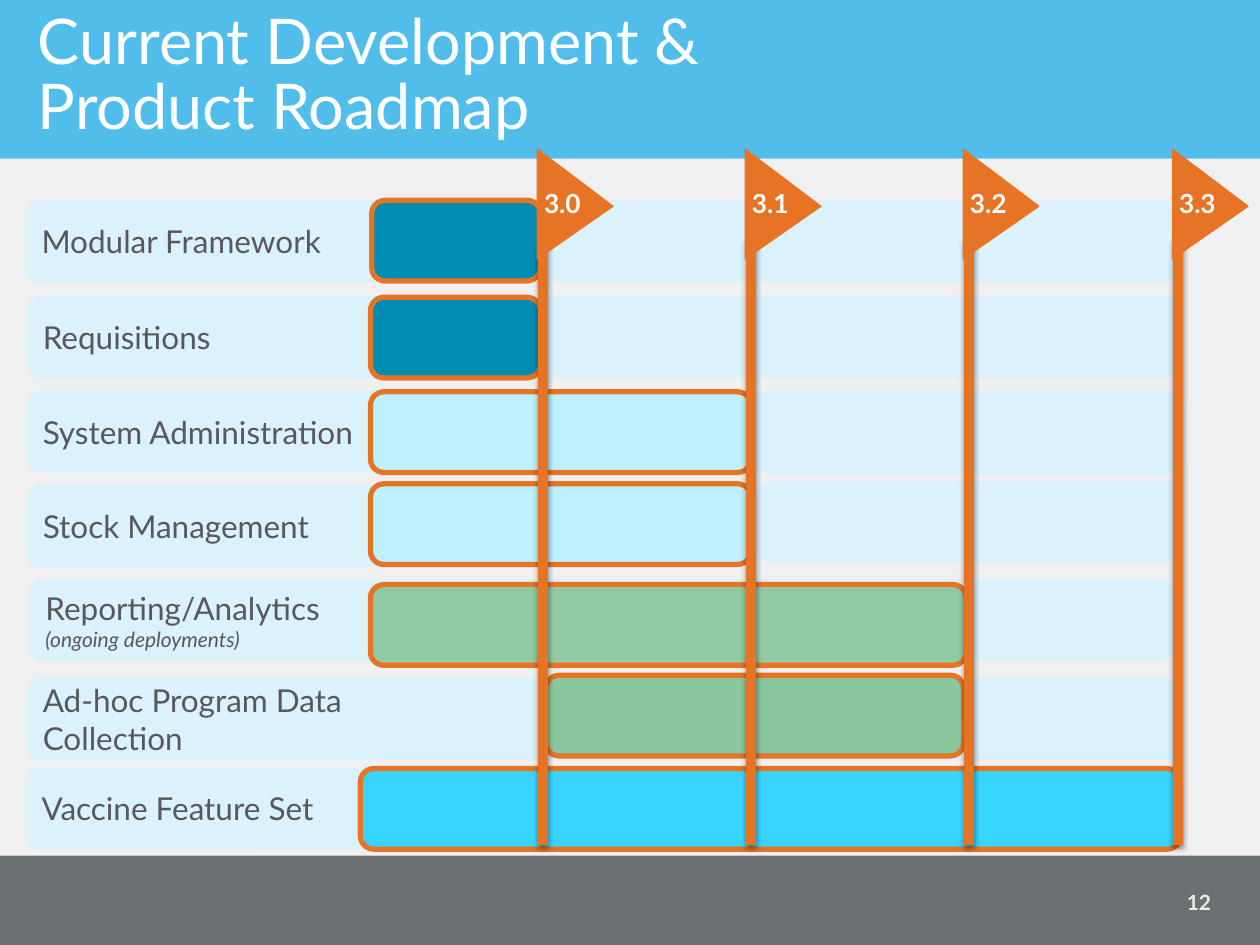
from lxml.etree import SubElement
from pptx import Presentation
from pptx.dml.color import RGBColor
from pptx.enum.shapes import MSO_CONNECTOR, MSO_SHAPE
from pptx.enum.text import MSO_ANCHOR, MSO_AUTO_SIZE, PP_ALIGN
from pptx.oxml.ns import qn
from pptx.util import Inches, Pt

COLORS = {
    "banner": "51BDEB", "footer": "6B7173", "panel": "F0F0F0", "lane": "DBF1FB",
    "orange": "E77325", "done": "008DB3", "planned": "BDF1FF", "vaccine": "38D5FF",
    "green": "008000", "text": "58585A", "white": "FFFFFF", "number": "EBEBEB",
    "shadow": "000000",
}


class RoadmapSlide:
    font_name = "Lato"

    def __init__(self, slide):
        self.slide = slide
        self.shapes = slide.shapes

    def color(self, name):
        return RGBColor.from_string(COLORS[name])

    def set_text(self, frame, lines, color, align=PP_ALIGN.LEFT, anchor=MSO_ANCHOR.MIDDLE):
        """Fill a text frame; each line is (text, dict of font values)."""
        frame.word_wrap = True
        frame.vertical_anchor = anchor
        for index, (text, style) in enumerate(lines):
            paragraph = frame.paragraphs[0] if index == 0 else frame.add_paragraph()
            paragraph.text = text
            paragraph.alignment = align
            for key, value in {"name": self.font_name, **style}.items():
                setattr(paragraph.font, key, value)
            paragraph.font.color.rgb = self.color(color)

    def box(self, kind, left, top, width, height, fill, line=None, line_width=3, alpha=None):
        shape = self.shapes.add_shape(
            kind, Inches(left), Inches(top), Inches(width), Inches(height))
        shape.shadow.inherit = False
        shape.fill.solid()
        shape.fill.fore_color.rgb = self.color(fill)
        if alpha:
            rgb = shape.element.spPr.find(".//" + qn("a:srgbClr"))
            SubElement(rgb, qn("a:alpha"), val=str(alpha * 1000))
        if line:
            shape.line.color.rgb = self.color(line)
            shape.line.width = Pt(line_width)
        else:
            shape.line.fill.background()
        return shape

    def title(self, text):
        title = self.shapes.title
        # The title belongs in front of the banner
        title.element.getparent().append(title.element)
        place = {"left": 0.2, "top": 0.03, "width": 9.52, "height": 1.17}
        for key, value in place.items():
            setattr(title, key, Inches(value))
        self.set_text(title.text_frame, [(text, {"size": Pt(36)})], "white")
        title.text_frame.auto_size = MSO_AUTO_SIZE.NONE
        title.text_frame.paragraphs[0].line_spacing = Pt(37.2)

    def text(self, left, top, width, height, text, size, color, **layout):
        label = self.shapes.add_textbox(
            Inches(left), Inches(top), Inches(width), Inches(height))
        self.set_text(label.text_frame, [(text, {"size": Pt(size), "bold": True})],
                      color, **layout)

    def lane(self, left, top, width, lines):
        lane = self.box(MSO_SHAPE.ROUNDED_RECTANGLE, left, top, width, 0.65, "lane")
        self.set_text(lane.text_frame, lines, "text")

    def bar(self, left, top, width, fill, alpha=None):
        self.box(MSO_SHAPE.ROUNDED_RECTANGLE, left, top, width, 0.64, fill,
                 line="orange", alpha=alpha)

    def pole(self, x, top, bottom):
        pole = self.shapes.add_connector(
            MSO_CONNECTOR.STRAIGHT, Inches(x), Inches(top), Inches(x), Inches(bottom))
        pole.line.color.rgb = self.color("orange")
        pole.line.width = Pt(6)
        effects = SubElement(pole.element.spPr, qn("a:effectLst"))
        shadow = SubElement(effects, qn("a:outerShdw"), blurRad=str(Pt(3.1)),
                            dist=str(Pt(1.6)), dir="5400000", rotWithShape="0")
        rgb = SubElement(shadow, qn("a:srgbClr"), val=COLORS["shadow"])
        SubElement(rgb, qn("a:alpha"), val="38000")

    def milestone(self, x, version):
        self.pole(x, 1.91, 6.71)
        flag = self.box(MSO_SHAPE.ISOSCELES_TRIANGLE, x - 0.18, 1.32, 0.87, 0.6,
                        "orange", line="orange", line_width=0.75)
        flag.rotation = 90
        flag.adjustments[0] = 0.52
        self.text(x - 0.09, 1.44, 0.63, 0.35, version, 15, "white",
                  anchor=MSO_ANCHOR.TOP)


def main():
    deck = Presentation()
    deck.slide_width, deck.slide_height = Inches(10), Inches(7.5)
    roadmap = RoadmapSlide(deck.slides.add_slide(deck.slide_layouts[5]))

    # Background bands, the panel behind the banner
    for top, height, fill in [(1.26, 5.53, "panel"), (0, 1.26, "banner"),
                              (6.79, 0.71, "footer")]:
        # The banner keeps its full visible height
        height = 1.26 if fill == "banner" else height
        roadmap.box(MSO_SHAPE.RECTANGLE, 0, top, 10, height, fill)

    # Title and page number
    roadmap.title("Current Development &\vProduct Roadmap")
    roadmap.text(8.92, 6.96, 0.79, 0.4, "12", 12, "number", align=PP_ALIGN.RIGHT)

    # Feature lanes: left, top, width, lines
    label = {"size": Pt(18)}
    note = {"size": Pt(12), "italic": True}
    lanes = [
        (0.2, 1.59, 9.13, [("Modular Framework", label)]),
        (0.21, 2.35, 9.16, [("Requisitions", label)]),
        (0.21, 3.1, 9.17, [("System Administration", label)]),
        (6.01, 3.12, 3.4, []),
        (0.21, 3.85, 5.48, [("Stock Management", label)]),
        (6.01, 3.82, 3.36, []),
        (0.23, 4.6, 9.08, [("Reporting/Analytics", label),
                           ("(ongoing deployments)", note)]),
        (0.21, 5.38, 9.17, [("Ad-hoc Program Data", label), ("Collection", label)]),
        (0.2, 6.09, 9.2, [("Vaccine Feature Set", label)]),
    ]
    for lane in lanes:
        roadmap.lane(*lane)

    # Development bars: left, top, width, fill, opacity in percent
    bars = [
        (2.95, 1.59, 1.34, "done"),
        (2.94, 2.36, 1.35, "done"),
        (2.94, 3.11, 3.02, "planned"),
        (2.94, 3.84, 3.02, "planned"),
        (2.94, 4.64, 4.73, "green", 34),
        (4.33, 5.36, 3.32, "green", 37),
        (2.86, 6.1, 6.51, "vaccine"),
    ]
    for bar in bars:
        roadmap.bar(*bar)

    # Release milestones
    for x, version in [(4.31, "3.0"), (5.96, "3.1"), (7.69, "3.2"), (9.35, "3.3")]:
        roadmap.milestone(x, version)

    deck.save("out.pptx")


if __name__ == "__main__":
    main()
